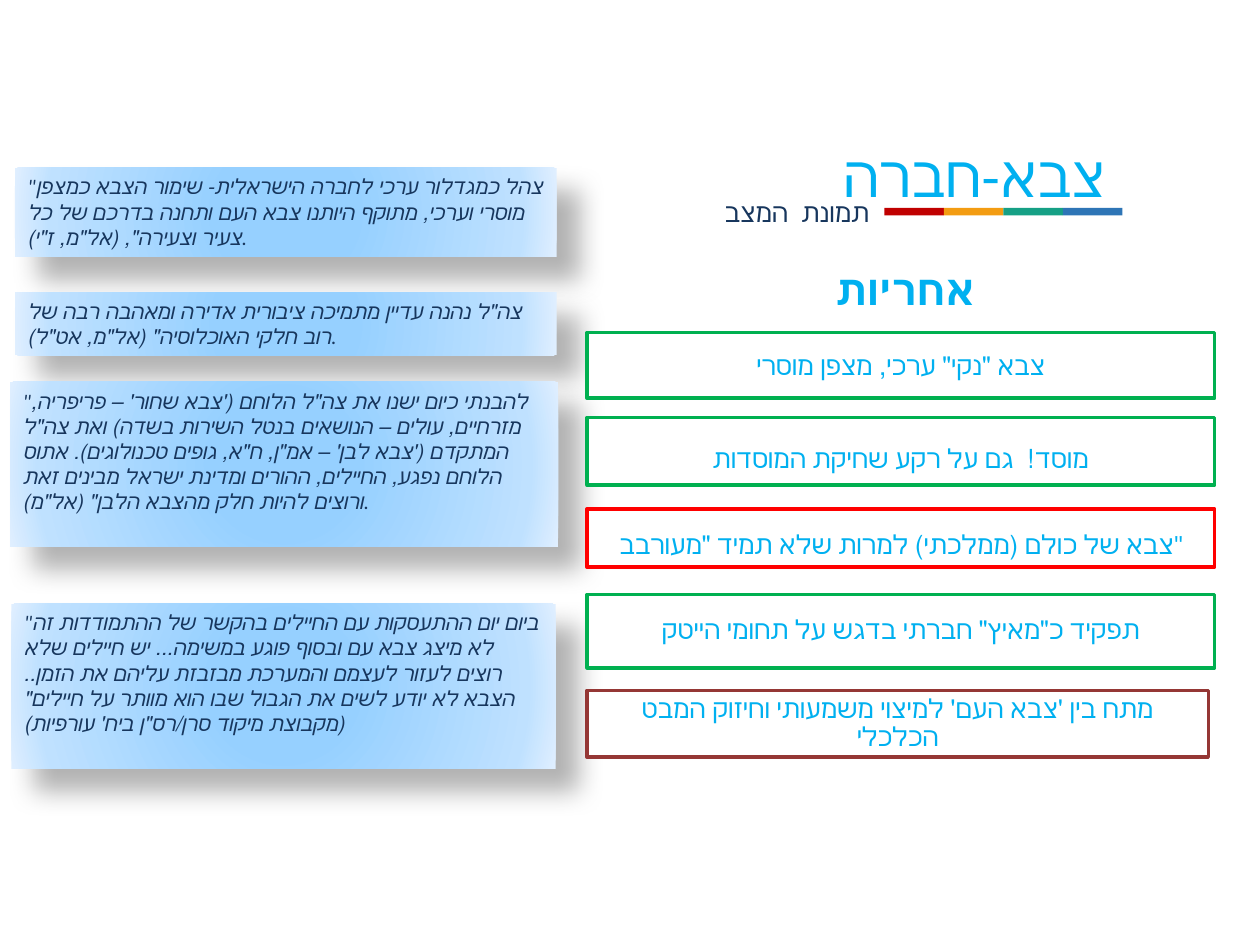
"""Build the army and society slide: quotes on the left, duties on the right."""
from lxml import etree
from pptx import Presentation
from pptx.dml.color import RGBColor
from pptx.enum import shapes, text
from pptx.oxml import ns
from pptx.util import Pt

HUES = {
    "sky": "00B0F0", "navy": "17365D", "white": "FFFFFF", "green": "00B050",
    "red": "FF0000", "wine": "953735", "crimson": "C00000", "amber": "F39C12",
    "teal": "16A085", "blue": "2E75B6", "black": "000000",
    "core": "96D0FF", "mid": "BFE1FF", "rim": "E0EFFF",
}
STOPS = ((25, "core"), (86, "mid"), (100, "rim"))
BARS = ("crimson", "amber", "teal", "blue")
QUOTES = (
    ((8.6, 95.8, 309.6, 51), "\"צהל כמגדלור ערכי לחברה הישראלית- שימור הצבא כמצפן מוסרי וערכי, מתוקף היותנו צבא העם ותחנה בדרכם של כל צעיר וצעירה\", (אל\"מ, ז\"י)."),
    ((8.6, 167, 309.6, 36), "צה\"ל נהנה עדיין מתמיכה ציבורית אדירה ומאהבה רבה של רוב חלקי האוכלוסיה\" (אל\"מ, אט\"ל)."),
    ((5.8, 218.2, 313.2, 94.3), "\"להבנתי כיום ישנו את צה\"ל הלוחם ('צבא שחור' – פריפריה, מזרחיים, עולים – הנושאים בנטל השירות בשדה) ואת צה\"ל המתקדם ('צבא לבן' – אמ\"ן, ח\"א, גופים טכנולוגים). אתוס הלוחם נפגע, החיילים, ההורים ומדינת ישראל מבינים זאת ורוצים להיות חלק מהצבא הלבן\" (אל\"מ)."),
    ((6.5, 344.9, 311, 94.3), "\"ביום יום ההתעסקות עם החיילים בהקשר של ההתמודדות זה לא מיצג צבא עם ובסוף פוגע במשימה... יש חיילים שלא רוצים לעזור לעצמם והמערכת מבזבזת עליהם את הזמן.. הצבא לא יודע לשים את הגבול שבו הוא מוותר על חיילים\" (מקבוצת מיקוד סרן/רס\"ן ביח' עורפיות)"),
)
DUTIES = (
    (190, 358.6, 37.6, "green", 1, 0, "צבא \"נקי\" ערכי, מצפן מוסרי"),
    (238.5, 358.6, 38.7, "green", 1.4, 6, "מוסד!  גם על רקע שחיקת המוסדות"),
    (290.8, 358.6, 33.3, "red", 1.4, 6, "צבא של כולם (ממלכתי) למרות שלא תמיד \"מעורבב\""),
    (339.8, 358.6, 41.8, "green", 0.9, 0, "תפקיד כ\"מאיץ\" חברתי בדגש על תחומי הייטק"),
    (394.5, 355, 38.2, "wine", 0.9, 0, "מתח בין 'צבא העם' למיצוי משמעותי וחיזוק המבט הכלכלי"),
)


def hue(name):
    """Return the named colour."""
    return RGBColor.from_string(HUES[name])


def write(frame, words, size, face, tint, align, bold=False, slant=False):
    """Add one run of text and return its paragraph."""
    para = frame.paragraphs[0]
    para.alignment = align
    run = para.add_run()
    run.text = words
    font = run.font
    font.size, font.name, font.bold, font.italic = Pt(size), face, bold, slant
    font.color.rgb = hue(tint)
    return para


def rect(slide, place, fill, edge=None):
    """Add a plain rectangle."""
    box = slide.shapes.add_shape(shapes.MSO_SHAPE.RECTANGLE, *map(Pt, place))
    box.shadow.inherit = False
    box.fill.solid()
    box.fill.fore_color.rgb = hue(fill)
    if edge:
        box.line.color.rgb = hue(edge)
        box.line.width = Pt(2)
    else:
        box.line.fill.background()
    return box


def label(slide, place, words, size, face, tint, align, wrap=True, bold=False):
    """Add a text box."""
    frame = slide.shapes.add_textbox(*map(Pt, place)).text_frame
    frame.word_wrap = wrap
    write(frame, words, size, face, tint, align, bold)


def node(owner, tag, **attrs):
    """Add a drawing element with attributes."""
    item = etree.SubElement(owner, ns.qn("a:" + tag))
    for key, value in attrs.items():
        item.set(key, str(value))
    return item


def glow(box):
    """Give a box its round gradient and soft shadow."""
    props = box._element.spPr
    grad = etree.Element(ns.qn("a:gradFill"), rotWithShape="1")
    stops = node(grad, "gsLst")
    for pos, name in STOPS:
        node(node(stops, "gs", pos=pos * 1000), "srgbClr", val=HUES[name])
    focus = node(grad, "path", path="circle")
    node(focus, "fillToRect", l=50000, t=50000, r=50000, b=50000)
    props.replace(props.find(ns.qn("a:solidFill")), grad)
    shade = node(props.find(ns.qn("a:effectLst")), "outerShdw", blurRad=Pt(15),
                 dist=Pt(18), dir=45 * 60000, algn="tl", rotWithShape=0)
    node(node(shade, "srgbClr", val=HUES["black"]), "alpha", val=30000)


def quote(slide, place, words):
    """Add a shaded quote box."""
    box = rect(slide, place, "mid")
    glow(box)
    frame = box.text_frame
    frame.word_wrap = True
    frame.vertical_anchor = text.MSO_ANCHOR.TOP
    write(frame, words, 12, "Calibri", "navy", text.PP_ALIGN.LEFT, slant=True)


def duty(slide, top, width, height, edge, lead, after, words):
    """Add a framed duty."""
    frame = rect(slide, (335.5, top, width, height), "white", edge).text_frame
    frame.word_wrap = True
    frame.vertical_anchor = text.MSO_ANCHOR.MIDDLE
    para = write(frame, words, 15, "Karla", "sky", text.PP_ALIGN.CENTER)
    para.line_spacing = lead
    para.space_after = Pt(after)


def main():
    """Build and save the slide."""
    deck = Presentation()
    deck.slide_width, deck.slide_height = Pt(720), Pt(540)
    slide = deck.slides.add_slide(deck.slide_layouts[6])
    mid, left = text.PP_ALIGN.CENTER, text.PP_ALIGN.LEFT
    for i, name in enumerate(BARS):
        rect(slide, (505.4 + 34 * i, 118.8, 34, 4.3), name)
    label(slide, (400.3, 108.7, 110.2, 25.2), "תמונת  המצב", 15, "Calibri", "navy", mid, wrap=False)
    label(slide, (429.1, 76.3, 255.6, 47.5), "צבא-חברה", 33, "Calibri", "sky", mid)
    label(slide, (470.2, 146.9, 225.4, 36), "אחריות", 24, "Karla", "sky", left, bold=True)
    for place, words in QUOTES:
        quote(slide, place, words)
    for row in DUTIES:
        duty(slide, *row)
    deck.save("out.pptx")


if __name__ == "__main__":
    main()
